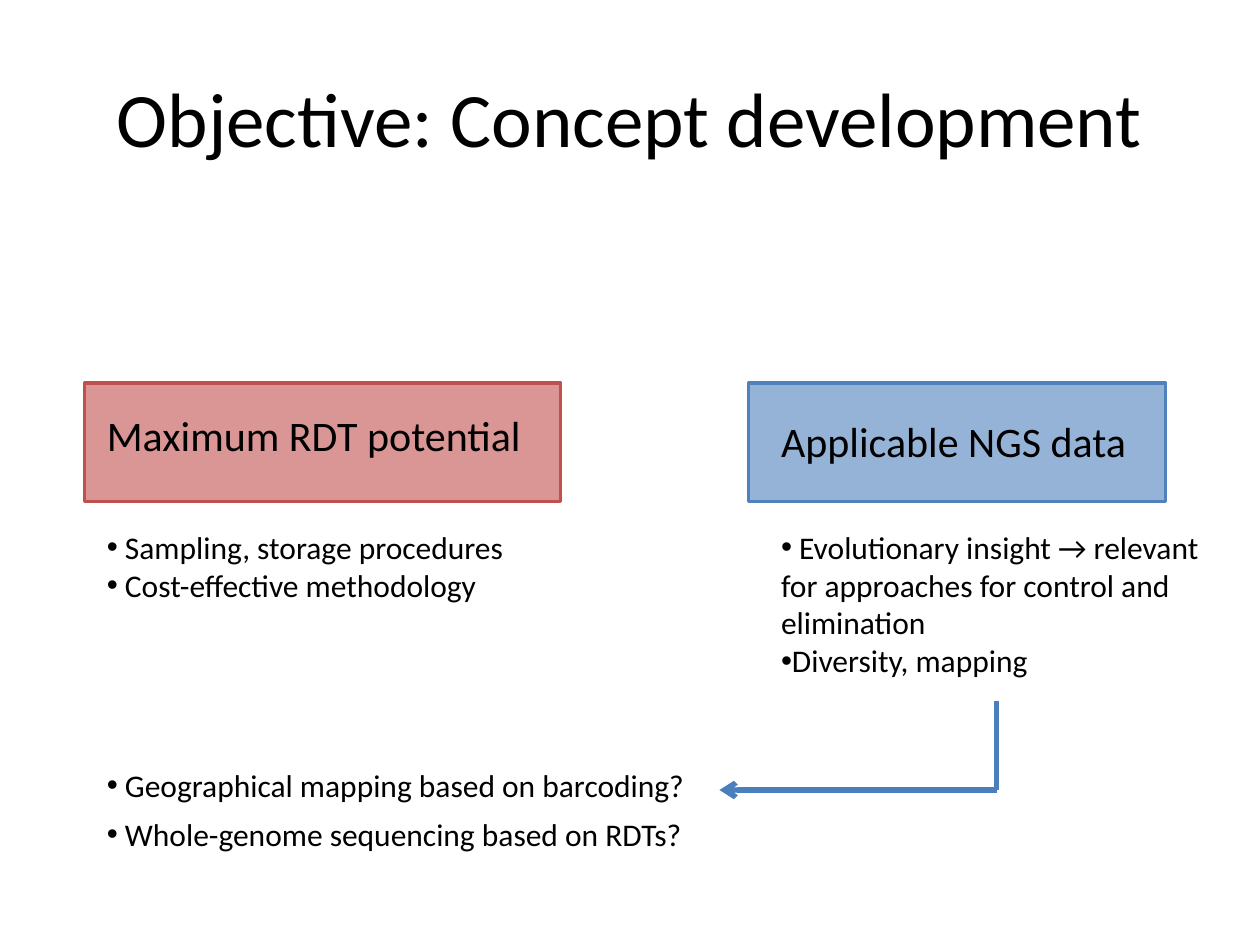
import pptx
import pptx.util
import pptx.dml.color
import pptx.enum.shapes
import pptx.enum.text
import pptx.oxml.ns
from lxml import etree

Inches = pptx.util.Inches
RGBColor = pptx.dml.color.RGBColor
Align = pptx.enum.text.PP_ALIGN
Anchor = pptx.enum.text.MSO_ANCHOR
qn = pptx.oxml.ns.qn

BLACK = RGBColor(0x00, 0x00, 0x00)
PINK = RGBColor(0xD9, 0x96, 0x94)
RED = RGBColor(0xC0, 0x50, 0x4D)
SKY = RGBColor(0x95, 0xB3, 0xD7)
BLUE = RGBColor(0x4F, 0x81, 0xBD)
STEEL = RGBColor(0x4B, 0x7E, 0xBC)


def write(frame, text, size=18, align=Align.LEFT, bullet=False):
    """Fill a text frame, one paragraph per line of text."""
    for i, line in enumerate(text.split("\n")):
        para = frame.paragraphs[0] if i == 0 else frame.add_paragraph()
        para.alignment = align
        if bullet:
            props = para._p.get_or_add_pPr()
            etree.SubElement(props, qn("a:buFont"), typeface="Arial")
            etree.SubElement(props, qn("a:buChar"), char="•")
        run = para.add_run()
        run.text = line
        run.font.name = "Calibri"
        run.font.size = pptx.util.Pt(size)
        run.font.color.rgb = BLACK


class Page:
    """The current slide and the style of its elements."""
    edge = 2
    stroke = 3

    def __init__(self, slide):
        self.shapes = slide.shapes

    def text(self, x, y, w, h, text, anchor=Anchor.TOP, **style):
        box = self.shapes.add_textbox(Inches(x), Inches(y), Inches(w), Inches(h))
        box.text_frame.word_wrap = True
        box.text_frame.vertical_anchor = anchor
        write(box.text_frame, text, **style)

    def panel(self, x, y, w, h, fill, line):
        kind = pptx.enum.shapes.MSO_SHAPE.RECTANGLE
        rect = self.shapes.add_shape(kind, Inches(x), Inches(y), Inches(w), Inches(h))
        rect.shadow.inherit = False
        rect.fill.solid()
        rect.fill.fore_color.rgb = fill
        rect.line.color.rgb = line
        rect.line.width = pptx.util.Pt(self.edge)

    def line(self, start, end, arrow=False):
        kind = pptx.enum.shapes.MSO_CONNECTOR.STRAIGHT
        link = self.shapes.add_connector(kind, *map(Inches, start + end))
        link.line.color.rgb = STEEL
        link.line.width = pptx.util.Pt(self.stroke)
        props = link._element.spPr
        if arrow:
            etree.SubElement(props.find(qn("a:ln")), qn("a:tailEnd"), type="arrow")
        etree.SubElement(props, qn("a:effectLst"))


def main():
    deck = pptx.Presentation()
    deck.slide_width, deck.slide_height = Inches(10), Inches(7.5)
    page = Page(deck.slides.add_slide(deck.slide_layouts[6]))
    left, right = 0.75, 6.1
    top, high, list_top = 3.04, 0.94, 4.14

    # Title
    page.text(0.5, 0.3, 9, 1.25, "Objective: Concept development",
              anchor=Anchor.MIDDLE, size=44, align=Align.CENTER)

    # Left column: rapid tests
    page.panel(0.67, top, 3.78, high, PINK, RED)
    page.text(left, 3.2, 4.33, 0.5, "Maximum RDT potential", size=24)
    page.text(left, list_top, 4.02, 0.71,
              " Sampling, storage procedures\n Cost-effective methodology",
              bullet=True)

    # Right column: sequencing
    page.panel(5.94, top, 3.31, high, SKY, BLUE)
    page.text(right, 3.25, 3.15, 0.5, "Applicable NGS data", size=24)
    page.text(right, list_top, 3.62, 1.31,
              " Evolutionary insight → relevant for approaches for control "
              "and elimination\nDiversity, mapping", bullet=True)

    # Bent arrow from sequencing to the open questions
    bend = (7.91, 6.27)
    page.line((7.91, 5.56), bend)
    page.line(bend, (5.71, 6.27), arrow=True)

    # Open questions
    asks = ("Geographical mapping based on barcoding?",
            "Whole-genome sequencing based on RDTs?")
    for i, ask in enumerate(asks):
        page.text(left, 6.03 + 0.39 * i, 5.91, 0.4, " " + ask, bullet=True)

    deck.save("out.pptx")


if __name__ == "__main__":
    main()
